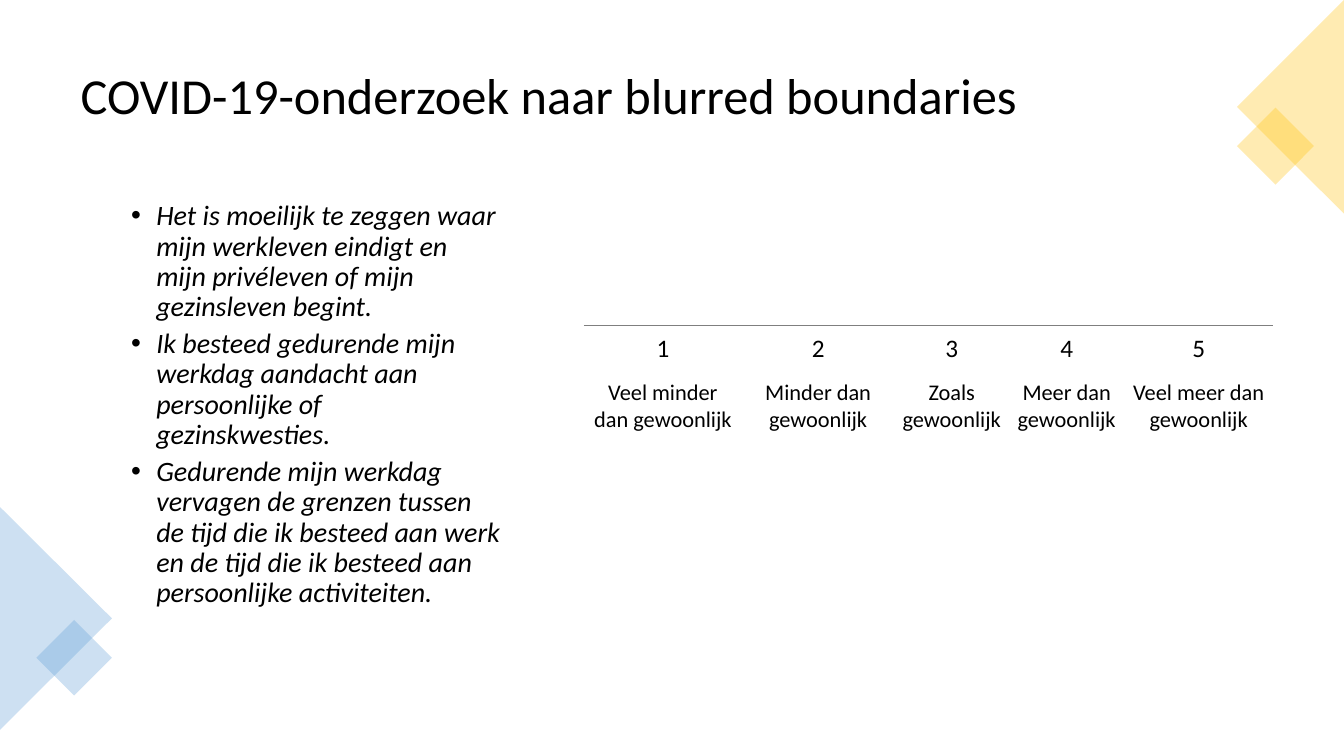
from dataclasses import dataclass

from lxml import etree
from pptx import Presentation
from pptx import util as u
from pptx.dml.color import RGBColor
from pptx.enum import shapes, text
from pptx.oxml import ns

BLACK = RGBColor(0x00, 0x00, 0x00)
BLUE = RGBColor(0x5B, 0x9B, 0xD5)
YELLOW = RGBColor(0xFF, 0xC0, 0x00)
GRAY = RGBColor(0x7F, 0x7F, 0x7F)

# The slide is a grid of square cells, 133.3 columns by 75 rows
CELL = u.Inches(0.1)
COLS, ROWS = 133.3, 75

TITLE = "COVID-19-onderzoek naar blurred boundaries"
STATEMENTS = [
    "Het is moeilijk te zeggen waar mijn werkleven eindigt en mijn privéleven of mijn gezinsleven begint.",
    "Ik besteed gedurende mijn werkdag aandacht aan persoonlijke of gezinskwesties.",
    "Gedurende mijn werkdag vervagen de grenzen tussen de tijd die ik besteed aan werk "
    "en de tijd die ik besteed aan persoonlijke activiteiten.",
]
# Answer label and column width
ANSWERS = [
    ("Veel minder dan gewoonlijk", 15.7),
    ("Minder dan gewoonlijk", 15.1),
    ("Zoals gewoonlijk", 11.4),
    ("Meer dan gewoonlijk", 11.4),
    ("Veel meer dan gewoonlijk", 14.8),
]


@dataclass(frozen=True)
class Box:
    col: float
    row: float
    cols: float
    rows: float

    def lengths(self) -> list[int]:
        return [cells(n) for n in (self.col, self.row, self.cols, self.rows)]


@dataclass(frozen=True)
class Decor:
    kind: shapes.MSO_SHAPE
    box: Box
    turn: int


TRIANGLE = shapes.MSO_SHAPE.ISOSCELES_TRIANGLE
SQUARE = shapes.MSO_SHAPE.RECTANGLE
CORNERS = [
    (BLUE, [Decor(TRIANGLE, Box(-5.5, 55.8, 22.1, 11.1), 90),
            Decor(SQUARE, Box(4.7, 62.6, 5.3, 5.3), 45)]),
    (YELLOW, [Decor(SQUARE, Box(123.8, 11.8, 5.4, 5.4), 45),
              Decor(TRIANGLE, Box(117.4, 5.3, 21.2, 10.6), 270)]),
]


def cells(n: float) -> int:
    return round(n * CELL)


def apply(obj, values: dict) -> None:
    for name, value in values.items():
        setattr(obj, name, value)


def write(p, wording: str, size: float, italic: bool = False) -> None:
    r = p.add_run()
    r.text = wording
    apply(r.font, {"name": "Calibri", "size": u.Pt(size), "italic": italic})
    r.font.color.rgb = BLACK


def place(sp, box: Box, anchor: text.MSO_ANCHOR):
    apply(sp, dict(zip(("left", "top", "width", "height"), box.lengths())))
    apply(sp.text_frame, {"vertical_anchor": anchor, "word_wrap": True,
                          "auto_size": text.MSO_AUTO_SIZE.NONE})
    return sp.text_frame


def add_bullet(p) -> None:
    pPr = p._p.get_or_add_pPr()
    pPr.set("marL", str(u.Inches(0.75)))
    pPr.set("indent", str(-u.Inches(0.25)))
    etree.SubElement(pPr, ns.qn("a:buFont")).set("typeface", "Arial")
    etree.SubElement(pPr, ns.qn("a:buChar")).set("char", "•")


def add_decor(grp, decor: Decor, color: RGBColor) -> None:
    sp = grp.shapes.add_shape(decor.kind, *decor.box.lengths())
    sp.rotation = decor.turn
    sp.shadow.inherit = False
    sp.fill.solid()
    sp.fill.fore_color.rgb = color
    sp.line.fill.background()
    clr = sp.fill._xPr.find(".//" + ns.qn("a:srgbClr"))
    etree.SubElement(clr, ns.qn("a:alpha")).set("val", "30000")


def add_top_border(cell, color: RGBColor) -> None:
    ln = etree.Element(ns.qn("a:lnT"), w=str(u.Pt(0.5)))
    fill = etree.SubElement(ln, ns.qn("a:solidFill"))
    etree.SubElement(fill, ns.qn("a:srgbClr")).set("val", str(color))
    cell._tc.get_or_add_tcPr().insert(0, ln)


def fill_cell(cell, wording: str, size: float, anchor: text.MSO_ANCHOR, top: float) -> None:
    apply(cell, {"margin_left": u.Inches(0.06), "margin_right": u.Inches(0.06),
                 "margin_top": u.Inches(top), "margin_bottom": u.Inches(0.11),
                 "vertical_anchor": anchor})
    cell.fill.background()
    p = cell.text_frame.paragraphs[0]
    p.alignment = text.PP_ALIGN.CENTER
    write(p, wording, size)


def add_scale(s) -> None:
    box = Box(57.9, 32.3, sum(width for _, width in ANSWERS), 13)
    table = s.shapes.add_table(2, len(ANSWERS), *box.lengths()).table
    apply(table, {"first_row": False, "horz_banding": False})
    # Table style without fills or lines
    style = table._tbl.tblPr.find(ns.qn("a:tableStyleId"))
    style.text = "{2D5ABB26-0587-4C30-8999-92F81FD0307C}"
    for row, height in zip(table.rows, (4.9, 8.1)):
        row.height = cells(height)
    for i, (label, width) in enumerate(ANSWERS):
        table.columns[i].width = cells(width)
        fill_cell(table.cell(0, i), str(i + 1), 18, text.MSO_ANCHOR.BOTTOM, 0.02)
        fill_cell(table.cell(1, i), label, 16, text.MSO_ANCHOR.TOP, 0.04)
        add_top_border(table.cell(0, i), GRAY)


def main() -> None:
    prs = Presentation()
    apply(prs, {"slide_width": cells(COLS), "slide_height": cells(ROWS)})
    s = prs.slides.add_slide(prs.slide_layouts[1])

    # Title
    tf = place(s.shapes.title, Box(7, 3.5, 119.3, 12.4), text.MSO_ANCHOR.MIDDLE)
    p = tf.paragraphs[0]
    apply(p, {"alignment": text.PP_ALIGN.LEFT, "line_spacing": 0.9})
    write(p, TITLE, 36)

    # Survey statements
    tf = place(s.placeholders[1], Box(7, 19.5, 43.8, 48.1), text.MSO_ANCHOR.TOP)
    for i, statement in enumerate(STATEMENTS):
        p = tf.add_paragraph() if i else tf.paragraphs[0]
        apply(p, {"level": 1, "line_spacing": 0.9, "space_before": u.Pt(5)})
        add_bullet(p)
        write(p, statement, 20, italic=True)

    # Corner decoration
    for color, decors in CORNERS:
        grp = s.shapes.add_group_shape()
        for decor in decors:
            add_decor(grp, decor, color)

    # Answer scale
    add_scale(s)
    prs.save("out.pptx")


if __name__ == "__main__":
    main()
